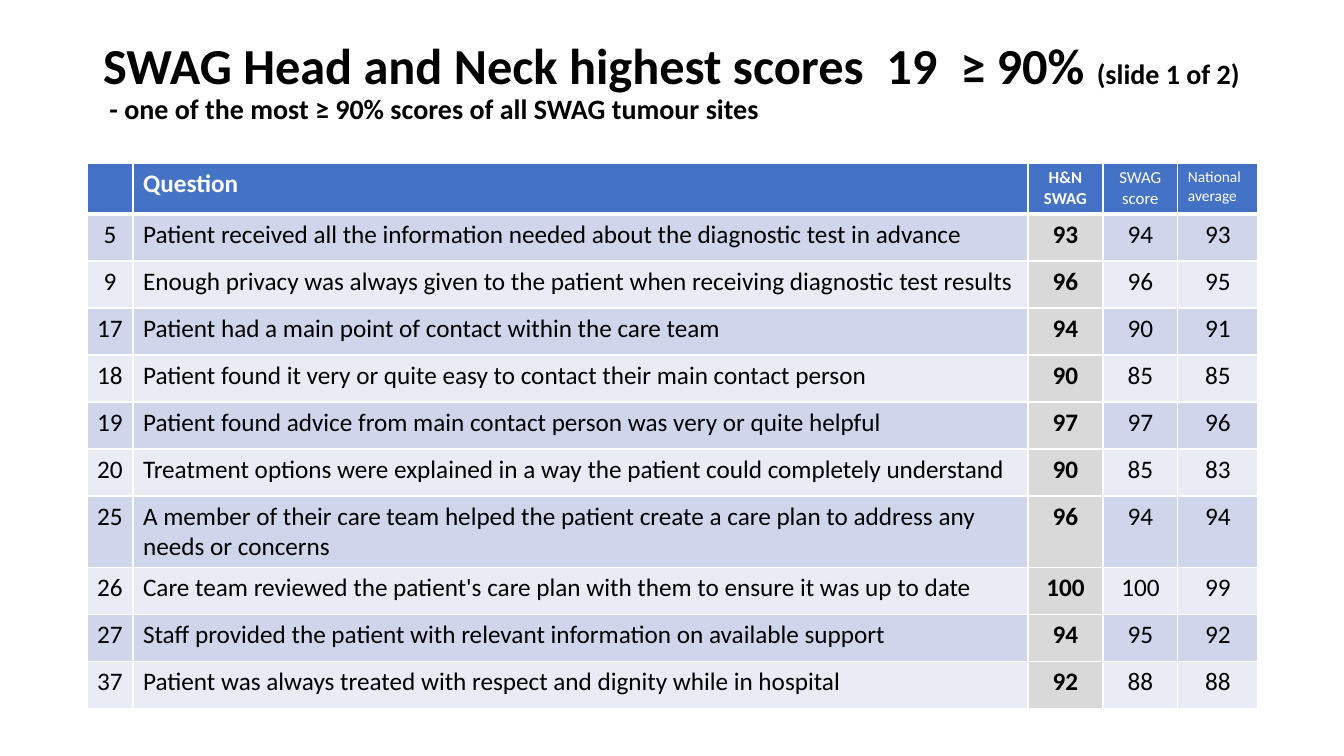
import pptx
import pptx.util
import pptx.dml.color
import pptx.enum.text
import pptx.oxml

SCALE = 914400 / 100.8
RGBColor = pptx.dml.color.RGBColor
BLACK = RGBColor(0x00, 0x00, 0x00)
WHITE = RGBColor(0xFF, 0xFF, 0xFF)
BLUE = RGBColor(0x44, 0x72, 0xC4)
GREY = RGBColor(0xD9, 0xD9, 0xD9)
BANDS = [RGBColor(0xCF, 0xD5, 0xEA), RGBColor(0xE9, 0xEB, 0xF5)]
LEFT = pptx.enum.text.PP_ALIGN.LEFT
CENTER = pptx.enum.text.PP_ALIGN.CENTER


def px(n):
    return pptx.util.Emu(round(n * SCALE))


def add_text(p, text, size=18, color=BLACK, bold=False, align=LEFT):
    p.alignment = align
    r = p.add_run()
    r.text = text
    r.font.name = "Calibri"
    r.font.size = pptx.util.Pt(size)
    r.font.bold = bold
    r.font.color.rgb = color


prs = pptx.Presentation()
prs.slide_width, prs.slide_height = px(1344), px(756)
slide = prs.slides.add_slide(prs.slide_layouts[5])

title = slide.shapes.title
title.left, title.top, title.width, title.height = px(93), px(16), px(1159), px(135)
tf = title.text_frame
tf.word_wrap = True
tf.auto_size = pptx.enum.text.MSO_AUTO_SIZE.NONE
tf.vertical_anchor = pptx.enum.text.MSO_ANCHOR.MIDDLE
p = tf.paragraphs[0]
p.line_spacing = 0.9
add_text(p, "SWAG Head and Neck highest scores  19  ≥ 90% ", size=36, bold=True)
add_text(p, "(slide 1 of 2)", size=20, bold=True)
p.add_line_break()
add_text(p, " - one of the most ≥ 90% scores of all SWAG tumour sites", size=20, bold=True)

headers = [
    ("", 18, True, LEFT),
    ("Question", 18, True, LEFT),
    ("H&N SWAG", 12, True, CENTER),
    ("SWAG score", 12, False, CENTER),
    ("National average", 11, False, LEFT),
]
scores = [
    (5, "Patient received all the information needed about the diagnostic test in advance", 93, 94, 93),
    (9, "Enough privacy was always given to the patient when receiving diagnostic test results", 96, 96, 95),
    (17, "Patient had a main point of contact within the care team", 94, 90, 91),
    (18, "Patient found it very or quite easy to contact their main contact person", 90, 85, 85),
    (19, "Patient found advice from main contact person was very or quite helpful", 97, 97, 96),
    (20, "Treatment options were explained in a way the patient could completely understand", 90, 85, 83),
    (25, "A member of their care team helped the patient create a care plan to address any needs or concerns", 96, 94, 94),
    (26, "Care team reviewed the patient's care plan with them to ensure it was up to date", 100, 100, 99),
    (27, "Staff provided the patient with relevant information on available support", 94, 95, 92),
    (37, "Patient was always treated with respect and dignity while in hospital", 92, 88, 88),
]
widths = [46, 895, 75, 75, 80]
heights = [46] + [47] * len(scores)

table = slide.shapes.add_table(
    len(heights), len(widths), px(87), px(163), px(sum(widths)), px(sum(heights))
).table
for column, width in zip(table.columns, widths):
    column.width = px(width)
for row, height in zip(table.rows, heights):
    row.height = px(height)

for j, (text, size, bold, align) in enumerate(headers):
    cell = table.cell(0, j)
    cell.fill.solid()
    cell.fill.fore_color.rgb = BLUE
    if text:
        add_text(cell.text_frame.paragraphs[0], text, size, WHITE, bold, align)

for i, values in enumerate(scores):
    for j, value in enumerate(values):
        cell = table.cell(i + 1, j)
        cell.fill.solid()
        cell.fill.fore_color.rgb = GREY if j == 2 else BANDS[i % 2]
        add_text(cell.text_frame.paragraphs[0], str(value), bold=j == 2,
                 align=LEFT if j == 1 else CENTER)

for i in range(len(heights)):
    for j in range(len(widths)):
        tcPr = table.cell(i, j)._tc.get_or_add_tcPr()
        for k, side in enumerate(["lnL", "lnR", "lnT", "lnB"]):
            thick = (i, side) in [(0, "lnB"), (1, "lnT")]
            tcPr.insert(k, pptx.oxml.parse_xml(
                f'<a:{side} xmlns:a="http://schemas.openxmlformats.org/drawingml/2006/main" '
                f'w="{pptx.util.Pt(3 if thick else 1)}"><a:solidFill>'
                f'<a:srgbClr val="{WHITE}"/></a:solidFill></a:{side}>'))

prs.save("out.pptx")
